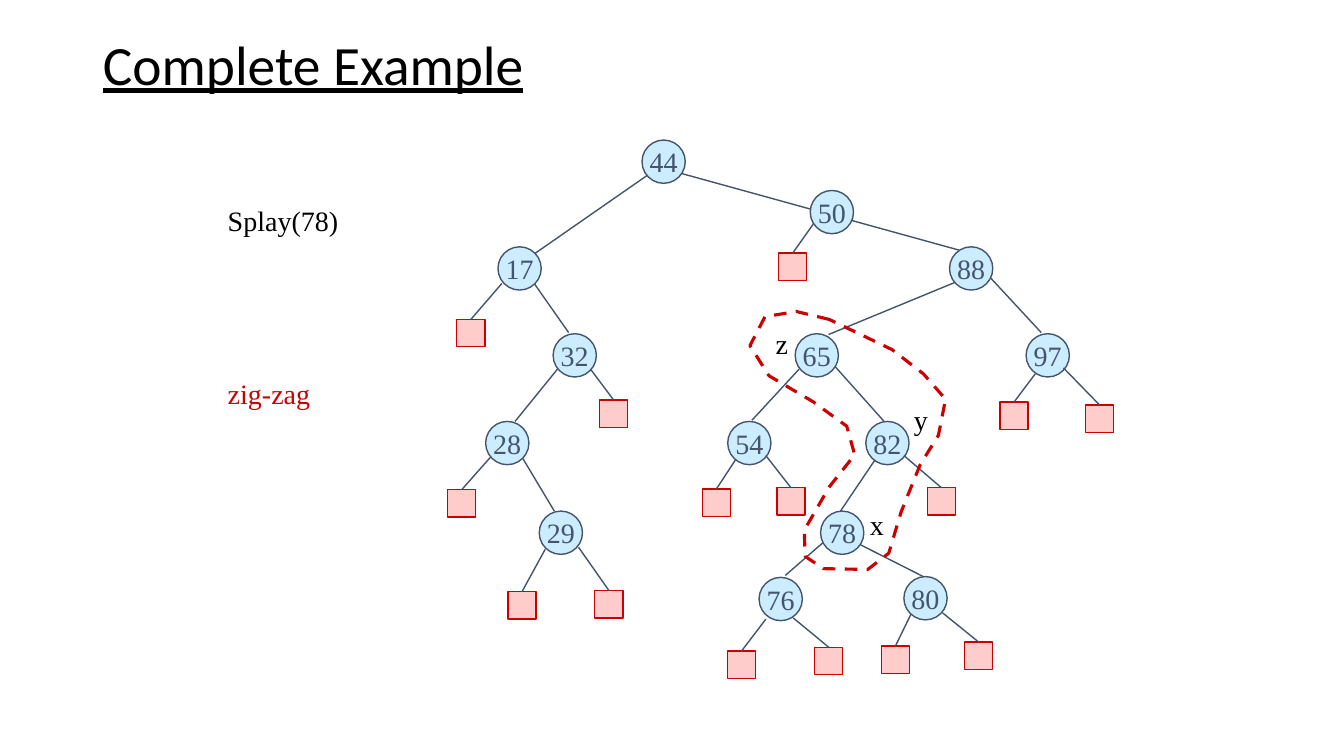
from dataclasses import dataclass

from lxml.etree import SubElement
from pptx import Presentation
from pptx.dml.color import RGBColor
from pptx.enum.dml import MSO_LINE
from pptx.enum.shapes import MSO_CONNECTOR, MSO_SHAPE
from pptx.enum.text import MSO_ANCHOR, MSO_AUTO_SIZE, PP_ALIGN
from pptx.oxml.ns import qn
from pptx.util import Cm, Pt


@dataclass(frozen=True)
class Theme:
    black: RGBColor = RGBColor.from_string("000000")
    slate: RGBColor = RGBColor.from_string("44546A")
    sky: RGBColor = RGBColor.from_string("CCECFF")
    red: RGBColor = RGBColor.from_string("CC0000")
    pink: RGBColor = RGBColor.from_string("FFCCCC")
    head: str = "Calibri"
    body: str = "Times New Roman"
    large: Pt = Pt(39.6)
    small: Pt = Pt(20)
    thin: Pt = Pt(1)
    thick: Pt = Pt(2.25)


theme = Theme()


def write(frame, text, size=theme.small, font=theme.body, color=theme.black,
          align=PP_ALIGN.LEFT, anchor=MSO_ANCHOR.TOP, wrap=False,
          under=False, space=1.0):
    frame.word_wrap = wrap
    frame.vertical_anchor = anchor
    line = frame.paragraphs[0]
    line.alignment = align
    line.line_spacing = space
    run = line.add_run()
    run.text = text
    run.font.size = size
    run.font.name = font
    run.font.color.rgb = color
    run.font.underline = under


def link(shapes, x1, y1, x2, y2):
    edge = shapes.add_connector(
        MSO_CONNECTOR.STRAIGHT, Cm(x1), Cm(y1), Cm(x2), Cm(y2))
    edge.line.color.rgb = theme.slate
    edge.line.width = theme.thin
    SubElement(edge._element.spPr, qn("a:effectLst"))
    return edge


deck = Presentation()
deck.slide_width, deck.slide_height = Cm(33.87), Cm(19.05)
slide = deck.slides.add_slide(deck.slide_layouts[5])
shapes = slide.shapes

title = shapes.title
title.left, title.top = Cm(2.34), Cm(1.02)
title.width, title.height = Cm(29.21), Cm(1.35)
title.text_frame.auto_size = MSO_AUTO_SIZE.NONE
write(title.text_frame, "Complete Example", size=theme.large, font=theme.head,
      anchor=MSO_ANCHOR.MIDDLE, wrap=True, under=True, space=0.9)

branches = [
    (16.31, 4.42, 13.49, 6.38),
    (17.17, 4.37, 24.16, 6.30),
    (13.46, 7.14, 14.33, 8.38),
    (14.05, 9.30, 12.98, 10.62),
    (13.18, 11.56, 13.97, 12.88),
    (24.08, 7.11, 20.88, 8.43),
    (24.97, 7.01, 26.24, 8.38),
    (20.14, 9.30, 18.95, 10.59),
    (21.03, 9.22, 22.28, 10.62),
    (22.07, 11.56, 21.18, 12.88),
    (21.67, 13.72, 23.27, 14.53),
    (20.78, 13.64, 19.79, 14.50),
]
for ends in branches:
    link(shapes, *ends)

nodes = {
    44: (16.18, 3.53), 50: (20.42, 4.80),
    17: (12.55, 6.22), 88: (23.93, 6.22),
    32: (13.94, 8.41), 65: (20.04, 8.41), 97: (25.86, 8.41),
    28: (12.24, 10.62), 54: (18.34, 10.62), 82: (21.82, 10.62),
    29: (13.59, 12.88), 78: (20.68, 12.88),
    76: (19.13, 14.55), 80: (22.78, 14.53),
}
for key, (x, y) in nodes.items():
    node = shapes.add_shape(MSO_SHAPE.OVAL, Cm(x), Cm(y), Cm(1.09), Cm(1.09))
    node.shadow.inherit = False
    node.fill.solid()
    node.fill.fore_color.rgb = theme.sky
    node.line.color.rgb = theme.slate
    node.line.width = theme.thin
    write(node.text_frame, str(key), color=theme.slate,
          align=PP_ALIGN.CENTER, anchor=MSO_ANCHOR.MIDDLE)

leaves = [
    (11.51, 8.05, 12.65, 7.14),
    (15.11, 10.08, 14.88, 9.30),
    (11.28, 12.34, 12.37, 11.51),
    (12.80, 14.91, 13.74, 13.84),
    (14.99, 14.88, 14.58, 13.79),
    (19.62, 6.38, 20.50, 5.64),
    (17.70, 12.32, 18.54, 11.58),
    (19.58, 12.29, 19.30, 11.48),
    (23.37, 12.29, 22.78, 11.48),
    (25.20, 10.13, 26.09, 9.42),
    (27.36, 10.21, 26.80, 9.27),
    (18.33, 16.41, 19.30, 15.60),
    (20.53, 16.31, 19.99, 15.57),
    (22.21, 16.28, 22.96, 15.47),
    (24.31, 16.18, 23.75, 15.44),
]
for x, y, fromx, fromy in leaves:
    leaf = shapes.add_shape(
        MSO_SHAPE.RECTANGLE, Cm(x), Cm(y), Cm(0.71), Cm(0.69))
    leaf.shadow.inherit = False
    leaf.fill.solid()
    leaf.fill.fore_color.rgb = theme.pink
    leaf.line.color.rgb = theme.red
    leaf.line.width = theme.thin
    link(shapes, fromx, fromy, x, y).end_connect(leaf, 0)

labels = [
    ("Splay(78)", 5.49, 5.00, 3.30, theme.black),
    ("zig-zag", 5.49, 9.37, 2.59, theme.red),
    ("x", 21.67, 12.67, 0.86, theme.black),
    ("y", 22.78, 10.01, 0.86, theme.black),
    ("z", 19.30, 8.10, 0.81, theme.black),
]
for text, x, y, width, color in labels:
    label = shapes.add_textbox(Cm(x), Cm(y), Cm(width), Cm(1.09))
    label.text_frame.auto_size = MSO_AUTO_SIZE.SHAPE_TO_FIT_TEXT
    write(label.text_frame, text, color=color)

points = [
    (20.90, 8.05), (20.07, 7.85), (19.28, 7.98), (18.90, 8.71),
    (19.38, 9.47), (20.50, 10.13), (21.34, 10.74), (21.54, 11.46),
    (20.90, 12.27), (20.27, 13.36), (20.29, 14.02), (20.75, 14.33),
    (21.87, 14.35), (22.40, 13.94), (22.71, 12.90), (23.19, 11.71),
    (23.65, 10.97), (23.83, 10.06), (23.27, 9.42), (22.48, 8.81),
]
first, *rest = [(Cm(x), Cm(y)) for x, y in points]
pen = shapes.build_freeform(*first)
pen.add_line_segments(rest, close=True)
loop = pen.convert_to_shape()
loop.shadow.inherit = False
loop.fill.background()
loop.line.color.rgb = theme.red
loop.line.width = theme.thick
loop.line.dash_style = MSO_LINE.DASH

deck.save("out.pptx")
